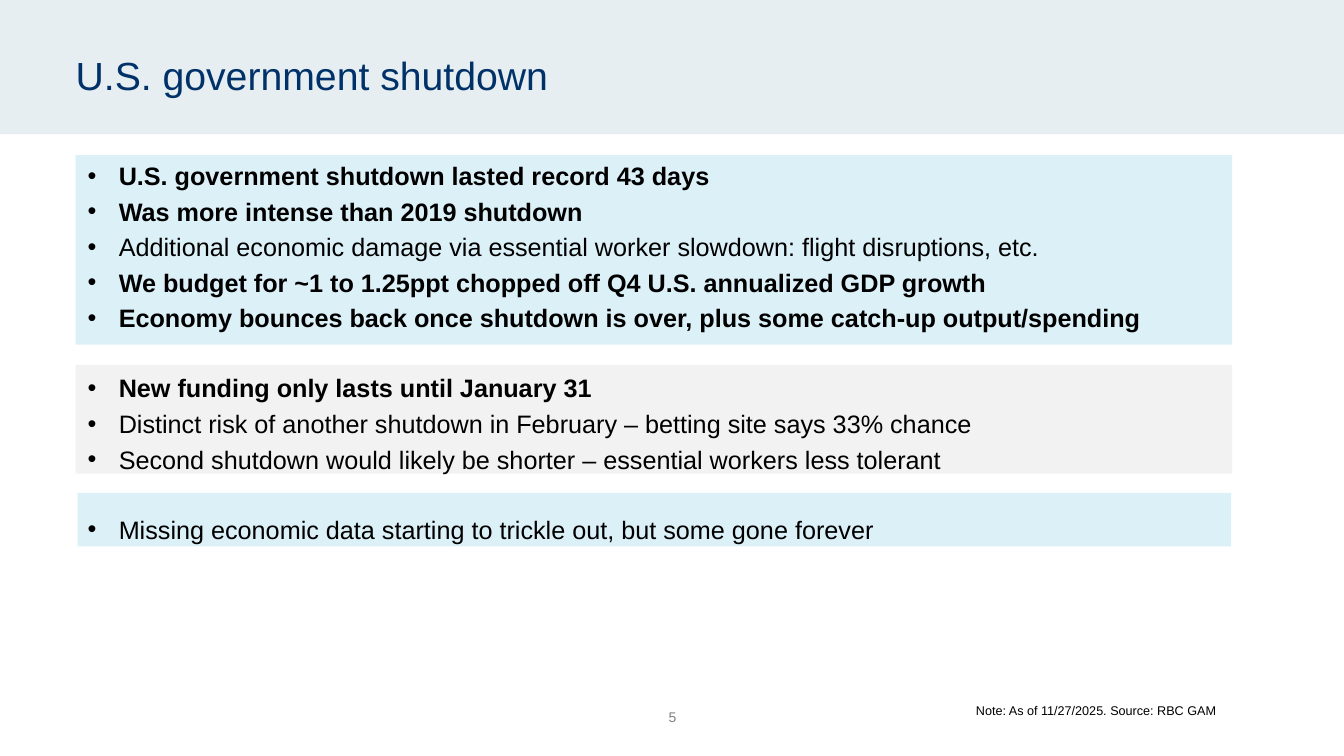
"""Build the slide on the U.S. government shutdown."""
from lxml.etree import SubElement
from pptx import Presentation
from pptx.dml.color import RGBColor as Rgb
from pptx.enum.shapes import MSO_SHAPE as Preset
from pptx.enum.text import MSO_ANCHOR as Anchor, MSO_AUTO_SIZE as AutoSize, PP_ALIGN as Align
from pptx.oxml.ns import qn
from pptx.util import Inches, Pt

COLORS = {
    "band": "E7EEF1",
    "blue": "DCF0F8",
    "grey": "F2F2F2",
    "navy": "003168",
    "number": "808080",
    "black": "000000",
}
BODY_SIZE = 18
POINT_GAP = 3.85
GROUP_GAP = 28.4

TOPICS = [
    [
        ("U.S. government shutdown lasted record 43 days", True),
        ("Was more intense than 2019 shutdown", True),
        ("Additional economic damage via essential worker slowdown: flight disruptions, etc.", False),
        ("We budget for ~1 to 1.25ppt chopped off Q4 U.S. annualized GDP growth", True),
        ("Economy bounces back once shutdown is over, plus some catch-up output/spending", True),
    ],
    [
        ("New funding only lasts until January 31", True),
        ("Distinct risk of another shutdown in February – betting site says 33% chance", False),
        ("Second shutdown would likely be shorter – essential workers less tolerant", False),
    ],
    [("Missing economic data starting to trickle out, but some gone forever", False)],
]


class SlideBuilder:
    """Holds the style and the current slide."""

    font = "Arial"

    def __init__(self, slide):
        self.slide = slide

    def panel(self, area, color):
        """Draw a plain filled rectangle."""
        panel = self.slide.shapes.add_shape(Preset.RECTANGLE, *map(Inches, area))
        panel.shadow.inherit = False
        panel.fill.solid()
        panel.fill.fore_color.rgb = Rgb.from_string(COLORS[color])
        panel.line.fill.background()

    def run(self, paragraph, words, size, color, bold=False):
        """Add one styled run."""
        run = paragraph.add_run()
        run.text = words
        run.font.name = self.font
        run.font.size = Pt(size)
        run.font.bold = bold
        run.font.color.rgb = Rgb.from_string(COLORS[color])

    def frame(self, area):
        """Add a wrapping text box and return its frame."""
        frame = self.slide.shapes.add_textbox(*map(Inches, area)).text_frame
        frame.word_wrap = True
        return frame

    def label(self, area, words, size, color, align=Align.LEFT, anchor=Anchor.TOP, spacing=None):
        """Add a single line of text without insets."""
        frame = self.frame(area)
        frame.margin_left = frame.margin_right = frame.margin_top = frame.margin_bottom = 0
        frame.vertical_anchor = anchor
        paragraph = frame.paragraphs[0]
        paragraph.alignment = align
        paragraph.line_spacing = spacing
        self.run(paragraph, words, size, color)

    def bullets(self, area, topics):
        """Add grouped bullet points, with a wider gap after each group."""
        frame = self.frame(area)
        frame.auto_size = AutoSize.SHAPE_TO_FIT_TEXT
        paragraph = frame.paragraphs[0]
        for topic in topics:
            for position, (words, bold) in enumerate(topic, 1):
                if paragraph is None:
                    paragraph = frame.add_paragraph()
                properties = paragraph._p.get_or_add_pPr()
                properties.set("marL", str(Inches(0.31)))
                properties.set("indent", str(Inches(-0.31)))
                SubElement(properties, qn("a:buFont"), typeface=self.font)
                SubElement(properties, qn("a:buChar"), char="•")
                paragraph.space_after = Pt(GROUP_GAP if position == len(topic) else POINT_GAP)
                self.run(paragraph, words, BODY_SIZE, "black", bold)
                paragraph = None


def main():
    """Build and save the slide."""
    deck = Presentation()
    deck.slide_width, deck.slide_height = Inches(13.33), Inches(7.5)
    builder = SlideBuilder(deck.slides.add_slide(deck.slide_layouts[6]))

    builder.panel((-0.01, -0.01, 13.35, 1.34), "band")
    builder.panel((0.77, 4.89, 11.44, 0.53), "blue")
    builder.panel((0.75, 3.62, 11.47, 1.08), "grey")
    builder.panel((0.75, 1.54, 11.47, 1.88), "blue")

    builder.label((6.4, 7.01, 0.54, 0.2), "5", 10, "number", Align.CENTER, Anchor.MIDDLE)
    builder.label((0.75, 0.34, 11.81, 0.87), "U.S. government shutdown", 28, "navy",
                  anchor=Anchor.MIDDLE, spacing=0.9)
    builder.label((6.15, 6.97, 5.91, 0.2), "Note: As of 11/27/2025. Source: RBC GAM", 9, "black",
                  Align.RIGHT)
    builder.bullets((0.77, 1.54, 11.14, 3.85), TOPICS)

    deck.save("out.pptx")


if __name__ == "__main__":
    main()
